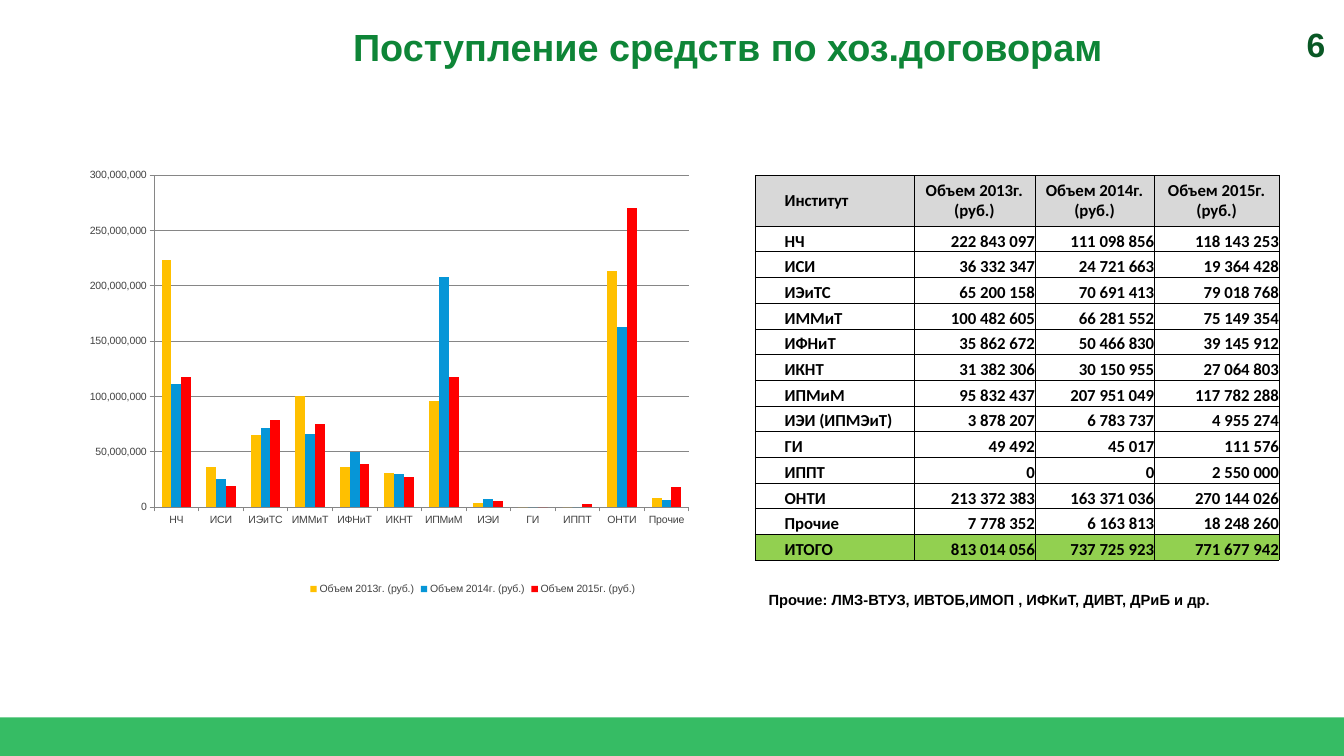
import pptx
import pptx.util
import pptx.oxml
import pptx.chart.data
import pptx.dml.color
import pptx.enum.chart
import pptx.enum.shapes
import pptx.enum.text

Inches = pptx.util.Inches
Pt = pptx.util.Pt
Align = pptx.enum.text.PP_ALIGN
Anchor = pptx.enum.text.MSO_ANCHOR
NS = pptx.oxml.ns.nsdecls("a")

COLORS = {"title": "0E8537", "number": "095825", "bar": "13B14A", "text": "000000",
          "head": "D8D8D8", "total": "92D050", "label": "424242", "axis": "868686",
          "2013": "FFC000", "2014": "0696D7", "2015": "FF0000"}


def rgb(name):
    return pptx.dml.color.RGBColor.from_string(COLORS[name])


def style(font, size, color, face="Arial", bold=True):
    font.name = face
    font.size = Pt(size)
    font.bold = bold
    font.color.rgb = rgb(color)


years = ["2013", "2014", "2015"]
heads = [f"Объем {year}г. (руб.)" for year in years]
rows = [
    ("НЧ", 222843097, 111098856, 118143253),
    ("ИСИ", 36332347, 24721663, 19364428),
    ("ИЭиТС", 65200158, 70691413, 79018768),
    ("ИММиТ", 100482605, 66281552, 75149354),
    ("ИФНиТ", 35862672, 50466830, 39145912),
    ("ИКНТ", 31382306, 30150955, 27064803),
    ("ИПМиМ", 95832437, 207951049, 117782288),
    ("ИЭИ (ИПМЭиТ)", 3878207, 6783737, 4955274),
    ("ГИ", 49492, 45017, 111576),
    ("ИППТ", 0, 0, 2550000),
    ("ОНТИ", 213372383, 163371036, 270144026),
    ("Прочие", 7778352, 6163813, 18248260),
]
total = ("ИТОГО", 813014056, 737725923, 771677942)

deck = pptx.Presentation()
deck.slide_width = Inches(17.78)
deck.slide_height = Inches(10)
slide = deck.slides.add_slide(deck.slide_layouts[5])
shapes = slide.shapes

bar = shapes.add_shape(pptx.enum.shapes.MSO_SHAPE.RECTANGLE,
                       Inches(0), Inches(9.49), Inches(17.78), Inches(0.51))
bar.shadow.inherit = False
bar.line.fill.background()
bar.fill.solid()
bar.fill.fore_color.rgb = rgb("bar")
tint = bar.fill._xPr.find(".//" + pptx.oxml.ns.qn("a:srgbClr"))
tint.append(pptx.oxml.parse_xml(f'<a:alpha {NS} val="85000"/>'))

title = shapes.title
title.left, title.top = Inches(1.88), Inches(0.67)
title.width, title.height = Inches(15.5), Inches(0.44)
frame = title.text_frame
frame.text = "Поступление средств по хоз.договорам"
frame.auto_size = pptx.enum.text.MSO_AUTO_SIZE.NONE
frame.vertical_anchor = Anchor.BOTTOM
frame.margin_top, frame.margin_bottom = Inches(0), Inches(0.2)
frame.paragraphs[0].alignment = Align.CENTER
style(frame.paragraphs[0].runs[0].font, 36, "title")

notes = [
    ("6", 16.92, 0.27, 0.71, 0.64, 32, "number", Align.RIGHT),
    ("Прочие: ЛМЗ-ВТУЗ, ИВТОБ,ИМОП , ИФКиТ, ДИВТ, ДРиБ и др.",
     10.07, 7.76, 6.77, 0.34, 14, "text", Align.LEFT),
]
for text, left, top, width, height, size, color, align in notes:
    box = shapes.add_textbox(Inches(left), Inches(top), Inches(width), Inches(height))
    frame = box.text_frame
    frame.word_wrap = True
    frame.text = text
    frame.paragraphs[0].alignment = align
    style(frame.paragraphs[0].runs[0].font, size, color)

data = pptx.chart.data.CategoryChartData(number_format="#,##0")
data.categories = [row[0].split(" ")[0] for row in rows]
for col, head in enumerate(heads, 1):
    data.add_series(head, [round(row[col], -6) for row in rows])
chart = shapes.add_chart(pptx.enum.chart.XL_CHART_TYPE.COLUMN_CLUSTERED, Inches(0.78),
                         Inches(1.93), Inches(10.95), Inches(5.98), data).chart
style(chart.font, 10, "label", bold=False)
chart.has_title = False
chart.has_legend = True
chart.legend.position = pptx.enum.chart.XL_LEGEND_POSITION.BOTTOM
chart.legend.include_in_layout = False
plot = chart.plots[0]
plot.gap_width = 150
plot.overlap = 0
plot.vary_by_categories = False
for year, series in zip(years, plot.series):
    series.format.fill.solid()
    series.format.fill.fore_color.rgb = rgb(year)
values = chart.value_axis
values.minimum_scale, values.maximum_scale = 0, 300000000
values.major_unit = 50000000
values.has_major_gridlines = True
values.tick_labels.number_format = "#,##0"
values.tick_labels.number_format_is_linked = False
for axis in (values, chart.category_axis):
    axis.major_tick_mark = pptx.enum.chart.XL_TICK_MARK.OUTSIDE
for line in (values.format.line, chart.category_axis.format.line,
             values.major_gridlines.format.line):
    line.color.rgb = rgb("axis")
    line.width = Pt(0.75)

area = chart._chartSpace.chart.plotArea
for old in area.findall(pptx.oxml.ns.qn("c:layout")):
    area.remove(old)
place = "".join(f'<c:{tag} val="{val}"/>' for tag, val in [
    ("layoutTarget", "inner"), ("xMode", "edge"), ("yMode", "edge"),
    ("x", 0.115), ("y", 0.065), ("w", 0.646), ("h", 0.734)])
area.insert(0, pptx.oxml.parse_xml(
    f'<c:layout {pptx.oxml.ns.nsdecls("c")}><c:manualLayout>{place}</c:manualLayout></c:layout>'))

grid = [("Институт", *heads)]
for name, *sums in rows + [total]:
    grid.append((name, *[f"{num:,}".replace(",", " ") for num in sums]))
table = shapes.add_table(len(grid), 4, Inches(9.99), Inches(2.32),
                         Inches(6.93), Inches(5.04)).table
table.horz_banding = False
for col, width in zip(table.columns, [2.1, 1.6, 1.58, 1.65]):
    col.width = Inches(width)
for r, texts in enumerate(grid):
    table.rows[r].height = Inches(0.34 if r else 0.67)
    for c, text in enumerate(texts):
        cell = table.cell(r, c)
        cell.margin_left = cell.margin_right = cell.margin_top = cell.margin_bottom = 0
        cell.vertical_anchor = Anchor.BOTTOM if r else Anchor.MIDDLE
        cell.text_frame.text = text
        para = cell.text_frame.paragraphs[0]
        if c == 0:
            para._p.get_or_add_pPr().set("marL", str(Inches(0.39)))
        else:
            para.alignment = Align.RIGHT if r else Align.CENTER
        style(para.runs[0].font, 16, "text", "Calibri")
        props = cell._tc.get_or_add_tcPr()
        for side in "LRTB":
            props.append(pptx.oxml.parse_xml(
                f'<a:ln{side} {NS} w="{Pt(0.5)}"><a:solidFill>'
                f'<a:srgbClr val="{COLORS["text"]}"/></a:solidFill></a:ln{side}>'))
        if r in (0, len(grid) - 1):
            cell.fill.solid()
            cell.fill.fore_color.rgb = rgb("total" if r else "head")
        else:
            cell.fill.background()

deck.save("out.pptx")
